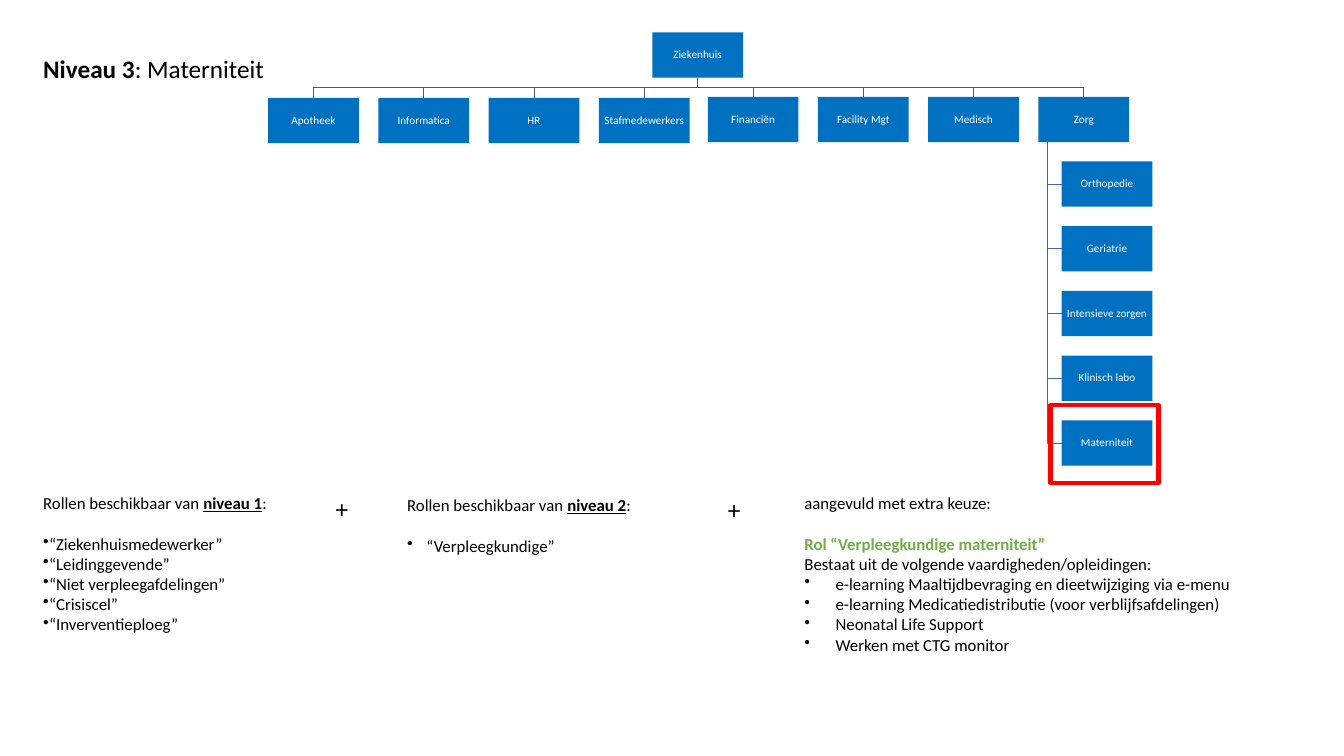
from pptx import Presentation
from pptx.dml.color import RGBColor
from pptx.enum.shapes import MSO_SHAPE
from pptx.enum.text import MSO_ANCHOR, PP_ALIGN
from pptx.oxml.xmlchemy import OxmlElement
from pptx.util import Inches, Pt

BLUE = RGBColor(0x00, 0x70, 0xC0)
TRUNK = RGBColor(0x36, 0x5B, 0x9D)
BRANCH = RGBColor(0x3E, 0x67, 0xB2)
RED = RGBColor(0xFF, 0x00, 0x00)
GREEN = RGBColor(0x70, 0xAD, 0x47)
BLACK = RGBColor(0x00, 0x00, 0x00)
WHITE = RGBColor(0xFF, 0xFF, 0xFF)

FONT = "Calibri"
WIDE, HIGH = 0.9, 0.45
LEFT = ["Apotheek", "Informatica", "HR", "Stafmedewerkers"]
RIGHT = ["Financiën", "Facility Mgt", "Medisch", "Zorg"]
UNITS = ["Orthopedie", "Geriatrie", "Intensieve zorgen", "Klinisch labo",
         "Materniteit"]


def add_run(para, text, size, color=BLACK, bold=False, under=False):
    run = para.add_run()
    run.text = text
    font = run.font
    font.name, font.size, font.bold = FONT, Pt(size), bold
    font.underline = under
    font.color.rgb = color


def add_bullet(para, indent):
    props = para._p.get_or_add_pPr()
    props.set("marL", str(Inches(indent)))
    props.set("indent", str(-Inches(indent)))
    mark = OxmlElement("a:buChar")
    mark.set("char", "•")
    props.append(mark)


def add_text(slide, box, paras, size=12, indent=0):
    """Each paragraph is a list of (text, style) runs, or a string for a bullet."""
    frame = slide.shapes.add_textbox(*map(Inches, box)).text_frame
    frame.word_wrap = True
    for i, item in enumerate(paras):
        para = frame.add_paragraph() if i else frame.paragraphs[0]
        if isinstance(item, str):
            add_bullet(para, indent)
            item = [(item, {})]
        if i == 1:
            para.space_before = Pt(14.6)
        for text, style in item:
            add_run(para, text, size, **style)


def add_line(slide, points, color):
    start, *rest = [(Inches(x), Inches(y)) for x, y in points]
    pen = slide.shapes.build_freeform(*start)
    pen.add_line_segments(rest, close=False)
    line = pen.convert_to_shape()
    line.shadow.inherit = False
    line.fill.background()
    line.line.color.rgb = color
    line.line.width = Pt(0.5)


def add_node(slide, name, x, y):
    node = slide.shapes.add_shape(
        MSO_SHAPE.RECTANGLE, *map(Inches, (x, y, WIDE, HIGH)))
    node.shadow.inherit = False
    node.fill.solid()
    node.fill.fore_color.rgb = BLUE
    node.line.fill.background()
    frame = node.text_frame
    frame.word_wrap = True
    frame.vertical_anchor = MSO_ANCHOR.MIDDLE
    frame.margin_left = frame.margin_right = Inches(0.01)
    frame.margin_top = frame.margin_bottom = Inches(0.01)
    para = frame.paragraphs[0]
    para.alignment = PP_ALIGN.CENTER
    para.line_spacing = 0.9
    add_run(para, name, 8, WHITE)


def add_chart(slide, x, y):
    """Hospital tree with its top left corner at x, y."""
    root = (x + 3.81, y)
    step = 3.28 / 3
    nodes = [(name, x + i * step, y + 0.65) for i, name in enumerate(LEFT)]
    nodes += [(name, x + 4.36 + i * step, y + 0.64)
              for i, name in enumerate(RIGHT)]
    care, top = nodes[-1][1:]
    units = [(name, care + 0.23, top + 0.64 + i * 2.57 / 4)
             for i, name in enumerate(UNITS)]

    stem = care + 0.09
    for _, left, head in units:
        mid = head + HIGH / 2
        add_line(slide, [(stem, top + HIGH), (stem, mid), (left, mid)], BRANCH)
    hub, base = root[0] + WIDE / 2, root[1] + HIGH
    for _, left, head in nodes:
        mid, end = (base + head) / 2, left + WIDE / 2
        add_line(slide, [(hub, base), (hub, mid), (end, mid), (end, head)],
                 TRUNK)
    for node in [("Ziekenhuis", *root)] + nodes + units:
        add_node(slide, *node)


def add_frame(slide, box):
    frame = slide.shapes.add_shape(MSO_SHAPE.RECTANGLE, *map(Inches, box))
    frame.shadow.inherit = False
    frame.fill.background()
    frame.line.color.rgb = RED
    frame.line.width = Pt(3)


def add_roles(slide, x, y):
    """Three columns of roles joined by plus signs."""
    def intro(level):
        return [("Rollen beschikbaar van ", {}),
                (level, {"bold": True, "under": True}), (":", {})]

    add_text(slide, (x, y, 2.6, 1.6), [
        intro("niveau 1"), "“Ziekenhuismedewerker”", "“Leidinggevende”",
        "“Niet verpleegafdelingen”", "“Crisiscel”", "“Inverventieploeg”"])
    add_text(slide, (x + 3.61, y + 0.02, 2.6, 1.01),
             [intro("niveau 2"), "“Verpleegkundige”"], indent=0.19)
    add_text(slide, (x + 7.55, y, 4.6, 2.12), [
        [("aangevuld met extra keuze:", {})],
        [("Rol “Verpleegkundige materniteit”",
          {"color": GREEN, "bold": True})],
        [("Bestaat uit de volgende vaardigheden/opleidingen:", {})],
        "e-learning Maaltijdbevraging en dieetwijziging via e-menu",
        "e-learning Medicatiedistributie (voor verblijfsafdelingen)",
        "Neonatal Life Support",
        "Werken met CTG monitor"], indent=0.31)
    for left, top in [(x + 2.9, y), (x + 6.79, y + 0.02)]:
        add_text(slide, (left, top, 0.33, 0.4), [[("+", {})]], 18)


def main():
    deck = Presentation()
    deck.slide_width, deck.slide_height = Inches(13.33), Inches(7.5)
    slide = deck.slides.add_slide(deck.slide_layouts[6])
    add_chart(slide, 2.66, 0.32)
    add_text(slide, (0.33, 0.48, 4.06, 0.4),
             [[("Niveau 3", {"bold": True}), (": Materniteit", {})]], 18)
    add_frame(slide, (10.42, 4.02, 1.07, 0.77))
    add_roles(slide, 0.33, 4.84)
    deck.save("out.pptx")


if __name__ == "__main__":
    main()
